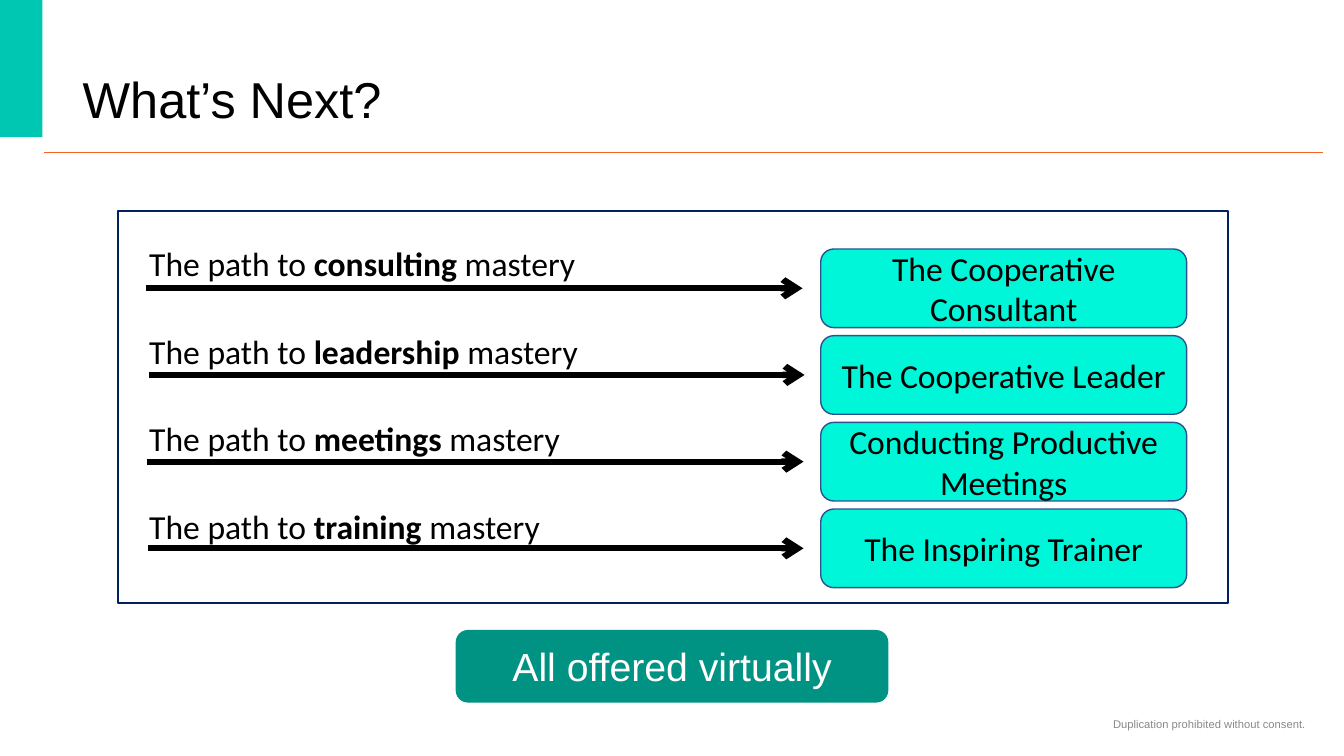
from dataclasses import dataclass

from lxml.etree import SubElement
from pptx import Presentation
from pptx.dml.color import RGBColor
from pptx.enum.shapes import MSO_CONNECTOR, MSO_SHAPE
from pptx.enum.text import MSO_ANCHOR, MSO_AUTO_SIZE, PP_ALIGN
from pptx.oxml.ns import qn
from pptx.shapes.autoshape import Shape
from pptx.shapes.connector import Connector
from pptx.slide import Slide
from pptx.text.text import TextFrame, _Paragraph
from pptx.util import Emu, Pt

PX_PER_INCH = 100
EMU_PER_PX = 914400 // PX_PER_INCH
ROW_PITCH = 86
COURSE_TOP = 247
ARROW_TOP = 286


@dataclass(frozen=True)
class Box:
    left: int
    top: int
    width: int
    height: int


@dataclass(frozen=True)
class Path:
    skill: str
    course: str
    arrow_start: int
    arrow_end: int


@dataclass(frozen=True)
class Style:
    size: int
    color: str
    font: str


PATHS = [
    Path("consulting", "The Cooperative Consultant", 145, 796),
    Path("leadership", "The Cooperative Leader", 148, 798),
    Path("meetings", "Conducting Productive Meetings", 146, 797),
    Path("training", "The Inspiring Trainer", 147, 797),
]
TITLE = Style(36, "000000", "Arial")
PATH_TEXT = Style(24, "000000", "Calibri")
OFFER = Style(28, "FFFFFF", "Arial")
NOTICE = Style(8, "898989", "Arial")


def px(length: int) -> Emu:
    return Emu(length * EMU_PER_PX)


def rgb(color: str) -> RGBColor:
    return RGBColor.from_string(color)


def place(shape: Shape, box: Box) -> None:
    shape.left, shape.top = px(box.left), px(box.top)
    shape.width, shape.height = px(box.width), px(box.height)


def add_run(paragraph: _Paragraph, text: str, style: Style, bold: bool = False) -> None:
    run = paragraph.add_run()
    run.text = text
    run.font.size = Pt(style.size)
    run.font.name = style.font
    run.font.bold = bold
    run.font.color.rgb = rgb(style.color)


def write_line(frame: TextFrame, text: str, style: Style, align: PP_ALIGN,
               anchor: MSO_ANCHOR = MSO_ANCHOR.MIDDLE) -> None:
    frame.word_wrap = True
    frame.auto_size = MSO_AUTO_SIZE.NONE
    frame.vertical_anchor = anchor
    frame.paragraphs[0].alignment = align
    add_run(frame.paragraphs[0], text, style)


def add_block(slide: Slide, kind: MSO_SHAPE, box: Box, fill: str,
              outline: str = "", weight: float = 1) -> Shape:
    block = slide.shapes.add_shape(
        kind, px(box.left), px(box.top), px(box.width), px(box.height))
    block.shadow.inherit = False
    block.fill.solid()
    block.fill.fore_color.rgb = rgb(fill)
    if outline:
        block.line.color.rgb = rgb(outline)
        block.line.width = Pt(weight)
    else:
        block.line.fill.background()
    return block


def add_rule(slide: Slide, start: int, end: int, top: int,
             color: str, weight: float) -> Connector:
    rule = slide.shapes.add_connector(
        MSO_CONNECTOR.STRAIGHT, px(start), px(top), px(end), px(top))
    rule.line.color.rgb = rgb(color)
    rule.line.width = Pt(weight)
    SubElement(rule._element.spPr, qn("a:effectLst"))
    return rule


def write_paths(frame: TextFrame) -> None:
    frame.word_wrap = True
    frame.auto_size = MSO_AUTO_SIZE.NONE
    frame.vertical_anchor = MSO_ANCHOR.TOP
    for row, path in enumerate(PATHS):
        paragraph = frame.add_paragraph() if row else frame.paragraphs[0]
        properties = paragraph._p.get_or_add_pPr()
        properties.set("marL", "0")
        properties.set("indent", "0")
        SubElement(properties, qn("a:buNone"))
        paragraph.alignment = PP_ALIGN.LEFT
        paragraph.space_before = Pt(33.8 if row else 0)
        add_run(paragraph, "The path to ", PATH_TEXT)
        add_run(paragraph, path.skill, PATH_TEXT, bold=True)
        add_run(paragraph, " mastery", PATH_TEXT)


def add_path_row(slide: Slide, row: int, path: Path) -> None:
    offset = row * ROW_PITCH
    course = add_block(slide, MSO_SHAPE.ROUNDED_RECTANGLE,
                       Box(814, COURSE_TOP + offset, 363, 78), "00F6D9", "2F528F")
    write_line(course.text_frame, path.course, PATH_TEXT, PP_ALIGN.CENTER)
    arrow = add_rule(slide, path.arrow_start, path.arrow_end,
                     ARROW_TOP + offset, "000000", 4.5)
    SubElement(arrow.line._get_or_add_ln(), qn("a:tailEnd"), type="arrow")


def main() -> None:
    deck = Presentation()
    deck.slide_width, deck.slide_height = px(1333), px(750)
    slide = deck.slides.add_slide(deck.slide_layouts[1])
    title, paths = slide.placeholders

    add_block(slide, MSO_SHAPE.RECTANGLE, Box(-2, -2, 44, 138), "00C7B1")
    add_rule(slide, 44, 1312, 151, "F26522", 0.5)

    place(title, Box(72, 57, 812, 76))
    write_line(title.text_frame, "What’s Next?", TITLE, PP_ALIGN.LEFT, MSO_ANCHOR.BOTTOM)
    title.text_frame.paragraphs[0].line_spacing = 0.9

    panel = add_block(slide, MSO_SHAPE.RECTANGLE, Box(117, 209, 1101, 389),
                      "FFFFFF", "002060", 1.5)
    paths._element.addprevious(panel._element)
    place(paths, Box(138, 236, 620, 318))
    write_paths(paths.text_frame)
    for row, path in enumerate(PATHS):
        add_path_row(slide, row, path)

    offer = add_block(slide, MSO_SHAPE.ROUNDED_RECTANGLE, Box(452, 625, 429, 72), "009383")
    write_line(offer.text_frame, "All offered virtually", OFFER, PP_ALIGN.CENTER)

    notice = slide.shapes.add_textbox(px(742), px(698), px(563), px(40))
    write_line(notice.text_frame, "Duplication prohibited without consent.",
               NOTICE, PP_ALIGN.RIGHT)

    deck.save("out.pptx")


if __name__ == "__main__":
    main()
